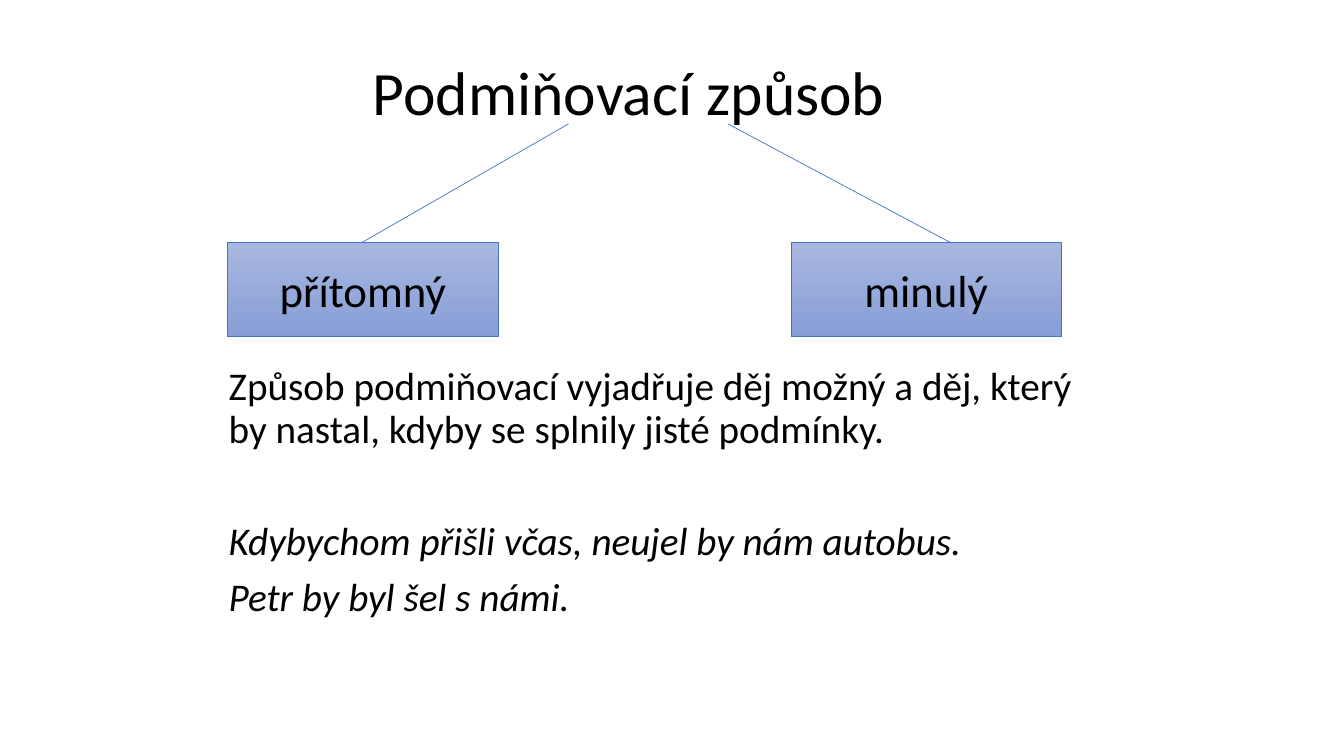
"""Build a slide on the conditional mood in Czech."""
import dataclasses

import lxml.etree
import pptx
import pptx.dml.color
import pptx.enum.dml
import pptx.enum.shapes
import pptx.enum.text
import pptx.oxml.ns
import pptx.util

Cm = pptx.util.Cm
Pt = pptx.util.Pt

TITLE = "Podmiňovací způsob"
BRANCHES = [
    {"label": "přítomný", "left": 5.74, "line_top": 14.33, "line_foot": 9.14},
    {"label": "minulý", "left": 19.94, "line_top": 18.34, "line_foot": 23.93},
]
PARAGRAPHS = [
    {"text": "Způsob podmiňovací vyjadřuje děj možný a děj, který by nastal, "
             "kdyby se splnily jisté podmínky.", "italic": False, "before": 10},
    {"text": "Kdybychom přišli včas, neujel by nám autobus.", "italic": True, "before": 50},
    {"text": "Petr by byl šel s námi.", "italic": True, "before": 10},
]
TITLE_AREA = (9.14, 0.91, 16.46, 2.97)
BODY_AREA = (5.51, 9.12, 22.86, 7.9)
BOX_TOP, BOX_WIDTH, BOX_HEIGHT = 6.1, 6.81, 2.39
LINE_TOP = 3.12


@dataclasses.dataclass(frozen=True)
class Theme:
    font: str = "Calibri"
    text: str = "000000"
    line: str = "4472C4"
    gradient: tuple = ("A8B7DF", "889ED7")
    title_size: int = 44
    box_size: int = 32
    body_size: int = 28
    line_width: float = 0.5
    spacing: float = 0.9


THEME = Theme()


def colour(code):
    return pptx.dml.color.RGBColor.from_string(code)


def place(shape, area):
    shape.left, shape.top, shape.width, shape.height = map(Cm, area)


def style_text(para, size, italic=False):
    for span in para.runs:
        span.font.name = THEME.font
        span.font.size = Pt(size)
        span.font.italic = italic
        span.font.color.rgb = colour(THEME.text)


def style_line(line):
    line.color.rgb = colour(THEME.line)
    line.width = Pt(THEME.line_width)


def fill_title(title):
    place(title, TITLE_AREA)
    frame = title.text_frame
    frame.text = TITLE
    frame.auto_size = pptx.enum.text.MSO_AUTO_SIZE.NONE
    frame.vertical_anchor = pptx.enum.text.MSO_ANCHOR.MIDDLE
    para = frame.paragraphs[0]
    para.alignment = pptx.enum.text.PP_ALIGN.LEFT
    para.line_spacing = THEME.spacing
    style_text(para, THEME.title_size)


def fill_body(body):
    place(body, BODY_AREA)
    frame = body.text_frame
    frame.text = "\n".join(entry["text"] for entry in PARAGRAPHS)
    frame.auto_size = pptx.enum.text.MSO_AUTO_SIZE.NONE
    for para, entry in zip(frame.paragraphs, PARAGRAPHS):
        para.line_spacing = THEME.spacing
        para.space_before = Pt(entry["before"])
        properties = para._p.get_or_add_pPr()
        properties.set("marL", "0")
        properties.set("indent", "0")
        lxml.etree.SubElement(properties, pptx.oxml.ns.qn("a:buNone"))
        style_text(para, THEME.body_size, entry["italic"])


def add_box(page, branch):
    box = page.shapes.add_shape(
        pptx.enum.shapes.MSO_SHAPE.RECTANGLE,
        Cm(branch["left"]), Cm(BOX_TOP), Cm(BOX_WIDTH), Cm(BOX_HEIGHT))
    box.shadow.inherit = False
    box.fill.gradient()
    box.fill.gradient_angle = 270
    for stop, code in zip(box.fill.gradient_stops, THEME.gradient):
        stop.color.rgb = colour(code)
    style_line(box.line)
    box.text_frame.text = branch["label"]
    box.text_frame.vertical_anchor = pptx.enum.text.MSO_ANCHOR.MIDDLE
    para = box.text_frame.paragraphs[0]
    para.alignment = pptx.enum.text.PP_ALIGN.CENTER
    style_text(para, THEME.box_size)


def add_branch_line(page, branch):
    link = page.shapes.add_connector(
        pptx.enum.shapes.MSO_CONNECTOR.STRAIGHT,
        Cm(branch["line_foot"]), Cm(BOX_TOP), Cm(branch["line_top"]), Cm(LINE_TOP))
    style_line(link.line)
    lxml.etree.SubElement(link._element.spPr, pptx.oxml.ns.qn("a:effectLst"))


def main():
    deck = pptx.Presentation()
    deck.slide_width, deck.slide_height = Cm(33.87), Cm(19.05)
    page = deck.slides.add_slide(deck.slide_layouts[1])
    fill_title(page.shapes.title)
    fill_body(page.placeholders[1])
    for branch in BRANCHES:
        add_box(page, branch)
    for branch in BRANCHES:
        add_branch_line(page, branch)
    deck.save("out.pptx")


if __name__ == "__main__":
    main()
